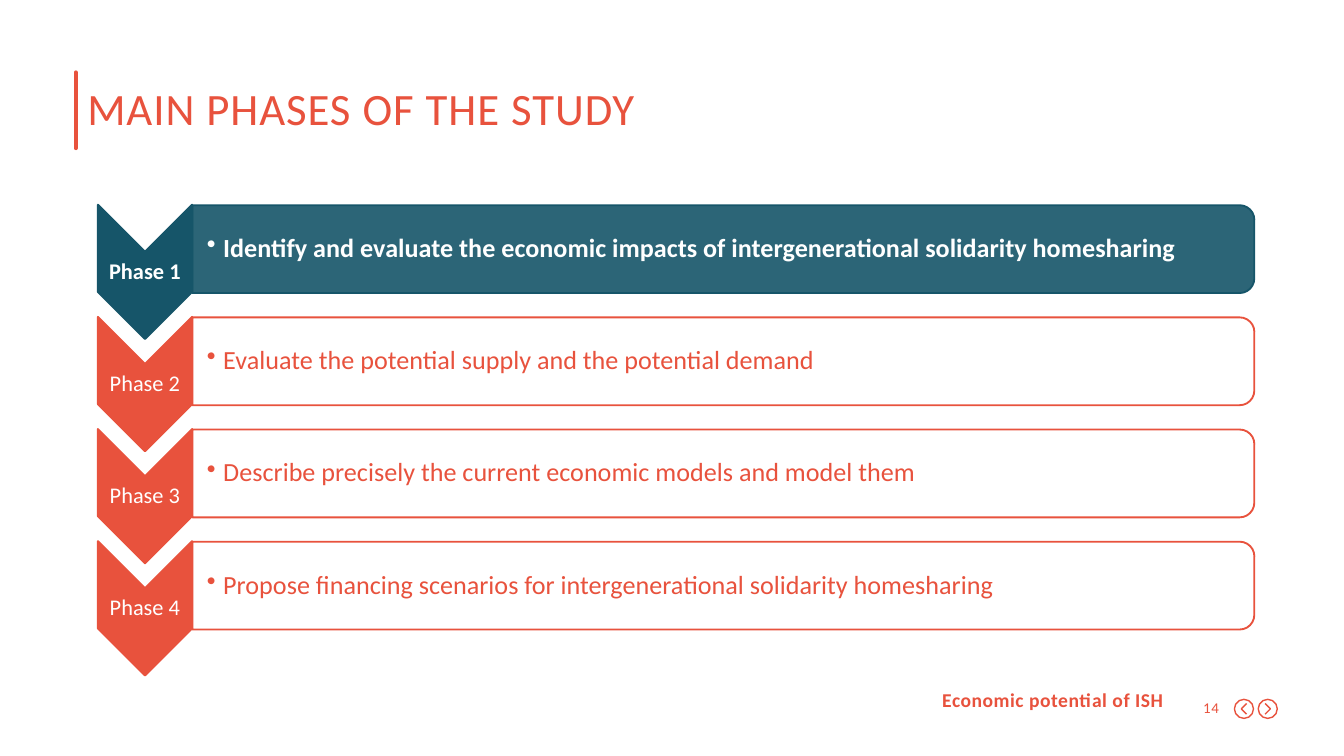
from lxml import etree
from pptx import Presentation
from pptx.dml.color import RGBColor
from pptx.enum import shapes, text
from pptx.oxml.ns import qn
from pptx.util import Cm, Pt

TITLE = "MAIN PHASES OF THE STUDY"
PHASES = [
    ("Phase 1", "Identify and evaluate the economic impacts of intergenerational solidarity homesharing"),
    ("Phase 2", "Evaluate the potential supply and the potential demand"),
    ("Phase 3", "Describe precisely the current economic models and model them"),
    ("Phase 4", "Propose financing scenarios for intergenerational solidarity homesharing"),
]
ACTIVE = 0
FOOTER, PAGE = "Economic potential of ISH", "14"
ARROWS = [(23.51, -1), (23.96, 1)]
COLORS = {"red": "E8523D", "teal": "165569", "white": "FFFFFF"}
FONT = "Calibri"
PITCH, CHEV_Y, BAR_Y, ICON_Y = 2.12, 5.14, 4.71, 13.4
KIND, ALIGN, ANCHOR = shapes.MSO_SHAPE, text.PP_ALIGN, text.MSO_ANCHOR


def tint(name):
    return RGBColor.from_string(COLORS[name])


def write(shape, words, size=12, color="red", bold=False, align=ALIGN.LEFT,
          anchor=ANCHOR.MIDDLE, inset=(0.03, 0.03), space=0, lines=None, bullet=False):
    """Put formatted text in a shape; inset is (left, other sides) in cm."""
    frame = shape.text_frame
    frame.word_wrap = True
    frame.auto_size = text.MSO_AUTO_SIZE.NONE
    frame.vertical_anchor = anchor
    frame.margin_left = Cm(inset[0])
    frame.margin_right = frame.margin_top = frame.margin_bottom = Cm(inset[1])
    para = frame.paragraphs[0]
    para.alignment, para.line_spacing = align, lines
    run = para.add_run()
    run.text = words
    font = run.font
    font.name, font.size, font.bold = FONT, Pt(size), bold
    font.color.rgb = tint(color)
    if space:
        font._element.set("spc", str(space))
    if bullet:
        props = para._p.get_or_add_pPr()
        props.set("marL", str(Cm(0.31)))
        props.set("indent", str(-Cm(0.31)))
        etree.SubElement(props, qn("a:buChar")).set("char", "•")


def box(slide, x, y, w, h, words, **style):
    write(slide.shapes.add_textbox(Cm(x), Cm(y), Cm(w), Cm(h)), words, **style)


def paint(shape, fill, line, width=1, alpha=None):
    shape.shadow.inherit = False
    if fill:
        shape.fill.solid()
        shape.fill.fore_color.rgb = tint(fill)
    else:
        shape.fill.background()
    if alpha:
        tone = shape._element.spPr.find(qn("a:solidFill"))[0]
        etree.SubElement(tone, qn("a:alpha")).set("val", str(alpha * 1000))
    shape.line.color.rgb = tint(line)
    shape.line.width = Pt(width)


def turned(slide, kind, x, y, w, h, **style):
    shape = slide.shapes.add_shape(kind, Cm(x - w / 2), Cm(y - h / 2), Cm(w), Cm(h))
    shape.rotation = 90
    paint(shape, **style)


def head(slide):
    title = slide.shapes.title
    title.left, title.top, title.width, title.height = Cm(1.65), Cm(1.37), Cm(23.14), Cm(1.47)
    write(title, TITLE, size=24, inset=(0, 0), space=50, lines=0.9)
    rule = slide.shapes.add_connector(
        shapes.MSO_CONNECTOR.STRAIGHT, Cm(1.43), Cm(1.37), Cm(1.43), Cm(2.8))
    rule.line.color.rgb = tint("red")
    rule.line.width = Pt(2.25)
    rule.line._get_or_add_ln().set("cap", "rnd")
    etree.SubElement(rule._element.spPr, qn("a:effectLst"))


def phase(slide, row, label, words):
    on = row == ACTIVE
    main = "teal" if on else "red"
    mid, bar = CHEV_Y + row * PITCH, BAR_Y + row * PITCH
    turned(slide, KIND.CHEVRON, 2.74, mid, 2.54, 1.78, fill=main, line=main)
    box(slide, 1.85, mid - 0.38, 1.78, 0.76, label, color="white", bold=on,
        align=ALIGN.CENTER, lines=0.9)
    turned(slide, KIND.ROUND_2_SAME_RECTANGLE, 13.67, bar, 1.66, 20.07,
           fill="teal" if on else "white", line=main, alpha=90)
    box(slide, 3.63, bar - 0.75, 19.99, 1.5, words, size=14, bold=on, lines=0.9,
        color="white" if on else "red", inset=(0.28, 0.03), bullet=True)


def foot(slide):
    box(slide, 10.77, 12.88, 11.35, 0.66, FOOTER, size=10.5, bold=True,
        align=ALIGN.RIGHT, anchor=ANCHOR.TOP, inset=(0.25, 0.25 / 2), space=30)
    box(slide, 22.12, 13.11, 1.05, 0.53, PAGE, size=8, align=ALIGN.RIGHT,
        inset=(0.13, 0.13), space=30)
    for x, way in ARROWS:
        ring = slide.shapes.add_shape(
            KIND.OVAL, Cm(x - 0.18), Cm(ICON_Y - 0.18), Cm(0.36), Cm(0.36))
        paint(ring, None, "red", 0.75)
        back, tip = Cm(x - way * 0.05), Cm(x + way * 0.05)
        pen = slide.shapes.build_freeform(back, Cm(ICON_Y - 0.1))
        pen.add_line_segments([(tip, Cm(ICON_Y)), (back, Cm(ICON_Y + 0.1))], close=False)
        paint(pen.convert_to_shape(), None, "red", 0.75)


def main():
    deck = Presentation()
    deck.slide_width, deck.slide_height = Cm(25.4), Cm(14.29)
    slide = deck.slides.add_slide(deck.slide_layouts[5])
    head(slide)
    for row, (label, words) in enumerate(PHASES):
        phase(slide, row, label, words)
    foot(slide)
    deck.save("out.pptx")


if __name__ == "__main__":
    main()
